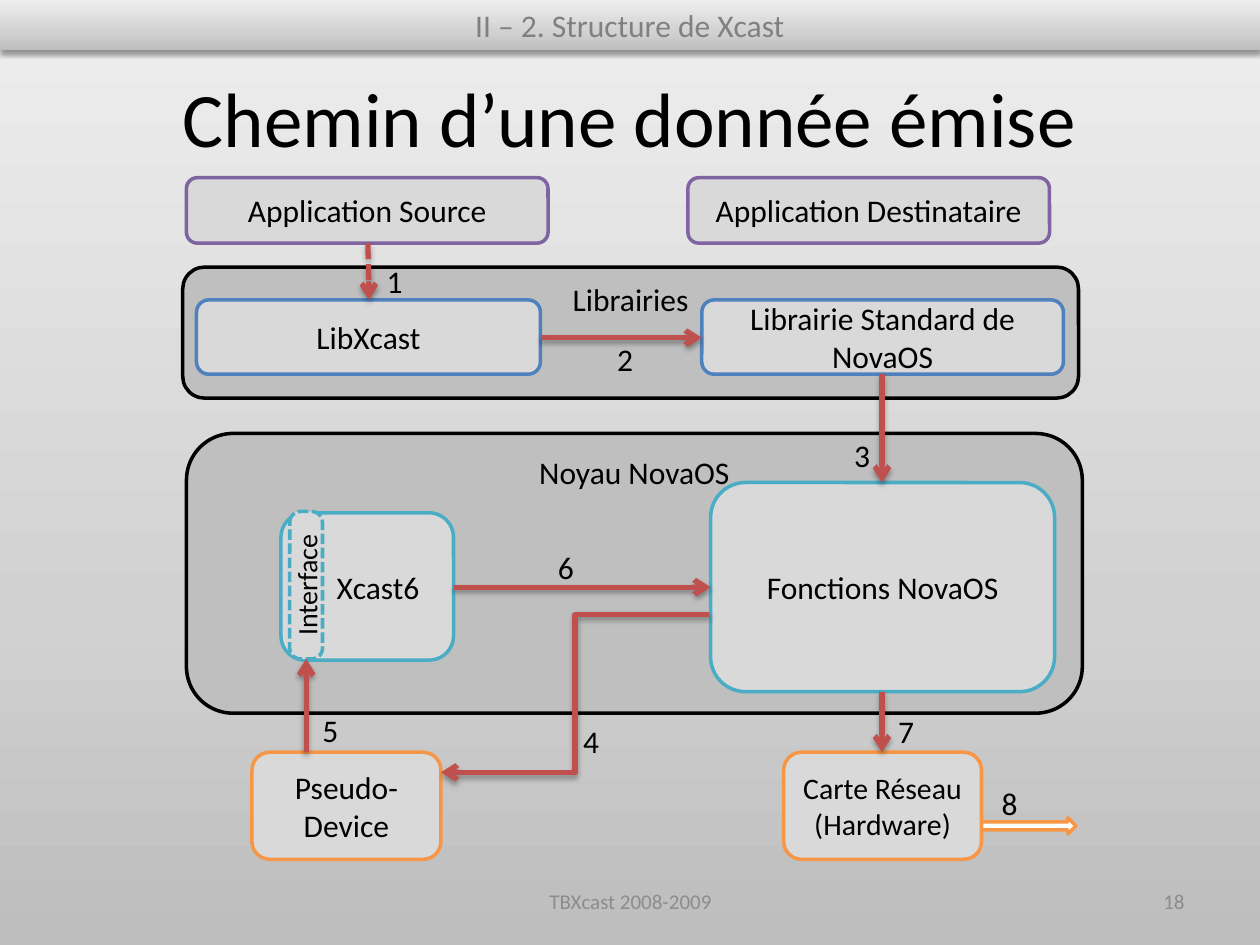
from copy import deepcopy

from lxml import etree
from pptx import Presentation
from pptx.dml.color import RGBColor
from pptx.enum.dml import MSO_LINE
from pptx.enum.shapes import MSO_CONNECTOR, MSO_SHAPE
from pptx.enum.text import MSO_ANCHOR, PP_ALIGN
from pptx.oxml.ns import qn
from pptx.util import Inches, Pt

BLACK = RGBColor(0x00, 0x00, 0x00)
WHITE = RGBColor(0xFF, 0xFF, 0xFF)
HEADER_GRAY = RGBColor(0x80, 0x80, 0x80)
FOOTER_GRAY = RGBColor(0x8C, 0x8C, 0x8C)
LAYER_GRAY = RGBColor(0xBF, 0xBF, 0xBF)
BLOCK_GRAY = RGBColor(0xD9, 0xD9, 0xD9)
PURPLE = RGBColor(0x80, 0x64, 0xA2)
BLUE = RGBColor(0x4F, 0x81, 0xBD)
AQUA = RGBColor(0x4B, 0xAC, 0xC6)
ORANGE = RGBColor(0xF7, 0x96, 0x46)
RED = RGBColor(0xC0, 0x50, 0x4D)
GRADIENT = [
    (0, RGBColor(0xBD, 0xBD, 0xBD)),
    (0.35, RGBColor(0xD1, 0xD1, 0xD1)),
    (1, RGBColor(0xEE, 0xEE, 0xEE)),
]


class DiagramSlide:
    font = "Calibri"

    def __init__(self, presentation):
        self.slide = presentation.slides.add_slide(presentation.slide_layouts[6])
        self.shapes = self.slide.shapes
        self.gradient(self.slide.background.fill)

    def gradient(self, fill):
        fill.gradient()
        fill.gradient_angle = 90
        last_stop = fill.gradient_stops[1]._gs
        last_stop.addprevious(deepcopy(last_stop))
        for stop, (position, color) in zip(fill.gradient_stops, GRADIENT):
            stop.position = position
            stop.color.rgb = color

    def shadow(self, shape, distance, opacity):
        properties = shape._element.spPr
        for old in properties.findall(qn("a:effectLst")):
            properties.remove(old)
        effects = etree.SubElement(properties, qn("a:effectLst"))
        outer = etree.SubElement(effects, qn("a:outerShdw"), blurRad="40000",
                                 dist=str(distance), dir="5400000", rotWithShape="0")
        color = etree.SubElement(outer, qn("a:srgbClr"), val=str(BLACK))
        etree.SubElement(color, qn("a:alpha"), val=str(opacity * 1000))

    def set_text(self, shape, lines, size=18, color=BLACK, align=PP_ALIGN.CENTER,
                 anchor=MSO_ANCHOR.MIDDLE, wrap=True):
        frame = shape.text_frame
        frame.word_wrap = wrap
        frame.vertical_anchor = anchor
        for index, line in enumerate(lines):
            paragraph = frame.add_paragraph() if index else frame.paragraphs[0]
            paragraph.alignment = align
            run = paragraph.add_run()
            run.text = line
            run.font.name = self.font
            run.font.size = Pt(size)
            run.font.color.rgb = color

    def text(self, box, line, **style):
        self.set_text(self.shapes.add_textbox(*map(Inches, box)), [line], **style)

    def label(self, left, top, number):
        self.text((left, top, 0.28, 0.34), number, align=PP_ALIGN.LEFT,
                  anchor=MSO_ANCHOR.TOP, wrap=False)

    def block(self, box, lines, line_color, fill=BLOCK_GRAY,
              kind=MSO_SHAPE.ROUNDED_RECTANGLE, **style):
        shape = self.shapes.add_shape(kind, *map(Inches, box))
        shape.shadow.inherit = False
        shape.fill.solid()
        shape.fill.fore_color.rgb = fill
        shape.line.color.rgb = line_color
        shape.line.width = Pt(2)
        self.set_text(shape, lines, **style)
        return shape

    def header(self, line):
        shape = self.shapes.add_shape(MSO_SHAPE.RECTANGLE, 0, 0, Inches(10), Inches(0.4))
        self.gradient(shape.fill)
        shape.line.fill.background()
        self.shadow(shape, 20000, 38)
        self.set_text(shape, [line], color=HEADER_GRAY)

    def arrow(self, start, end, kind=MSO_CONNECTOR.STRAIGHT, dashed=False):
        connector = self.shapes.add_connector(kind, *map(Inches, start + end))
        connector.line.color.rgb = RED
        connector.line.width = Pt(3)
        if dashed:
            connector.line.dash_style = MSO_LINE.SQUARE_DOT
        etree.SubElement(connector.line._get_or_add_ln(), qn("a:tailEnd"), type="arrow")
        self.shadow(connector, 23000, 35)


def main():
    presentation = Presentation()
    presentation.slide_width = Inches(10)
    presentation.slide_height = Inches(7.5)
    diagram = DiagramSlide(presentation)

    # Title and footer
    diagram.text((0.5, 0.3, 9, 1.25), "Chemin d’une donnée émise", size=44)
    diagram.text((3.42, 6.95, 3.17, 0.4), "TBXcast 2008-2009", size=12, color=FOOTER_GRAY)
    diagram.text((7.17, 6.95, 2.33, 0.4), "18", size=12, color=FOOTER_GRAY,
                 align=PP_ALIGN.RIGHT)

    # Layers
    for box, name in [((1.45, 2.12, 7.11, 1.04), "Librairies"),
                      ((1.48, 3.44, 7.11, 2.22), "Noyau NovaOS")]:
        diagram.block(box, [name], BLACK, LAYER_GRAY, anchor=MSO_ANCHOR.TOP)

    # Applications and libraries
    diagram.block((1.48, 1.41, 2.87, 0.52), ["Application Source"], PURPLE)
    diagram.block((5.46, 1.41, 2.87, 0.52), ["Application Destinataire"], PURPLE)
    diagram.block((1.56, 2.38, 2.73, 0.59), ["LibXcast"], BLUE)
    diagram.block((5.57, 2.38, 2.87, 0.59), ["Librairie Standard de NovaOS"], BLUE)

    # Kernel
    xcast = diagram.block((2.23, 4.07, 1.37, 1.17), ["Xcast6"], AQUA)
    xcast.text_frame.margin_left = Inches(0.27)
    interface = diagram.block((2.3, 4.06, 0.26, 1.17), ["Interface"], AQUA, size=16)
    interface.adjustments[0] = 0.33
    interface.line.dash_style = MSO_LINE.SQUARE_DOT
    interface.text_frame._txBody.bodyPr.set("vert", "vert270")
    diagram.block((5.64, 3.83, 2.73, 1.66), ["Fonctions NovaOS"], AQUA)

    # Devices and network output
    diagram.block((7.5, 6.49, 1.04, 0.13), [], ORANGE, WHITE, MSO_SHAPE.RIGHT_ARROW)
    diagram.block((2, 5.97, 1.5, 0.85), ["Pseudo-Device"], ORANGE)
    diagram.block((6.22, 5.97, 1.57, 0.85), ["Carte Réseau", "(Hardware)"], ORANGE, size=17)

    # Data path
    diagram.arrow((2.92, 1.93), (2.93, 2.38), dashed=True)
    diagram.arrow((4.29, 2.68), (5.57, 2.68))
    diagram.arrow((7, 2.97), (7, 3.83))
    diagram.arrow((5.63, 4.88), (3.5, 6.13), MSO_CONNECTOR.ELBOW)
    diagram.arrow((2.43, 5.97), (2.43, 5.23))
    diagram.arrow((3.6, 4.66), (5.64, 4.66))
    diagram.arrow((7, 5.49), (7, 5.97))

    # Step numbers
    steps = [(2.97, 2.03), (4.8, 2.65), (6.68, 3.41), (4.53, 5.68),
             (2.46, 5.59), (4.33, 4.3), (7.03, 5.6), (7.85, 6.17)]
    for number, (left, top) in enumerate(steps, start=1):
        diagram.label(left, top, str(number))

    # Section header
    diagram.header("II – 2. Structure de Xcast")

    presentation.save("out.pptx")


if __name__ == "__main__":
    main()
